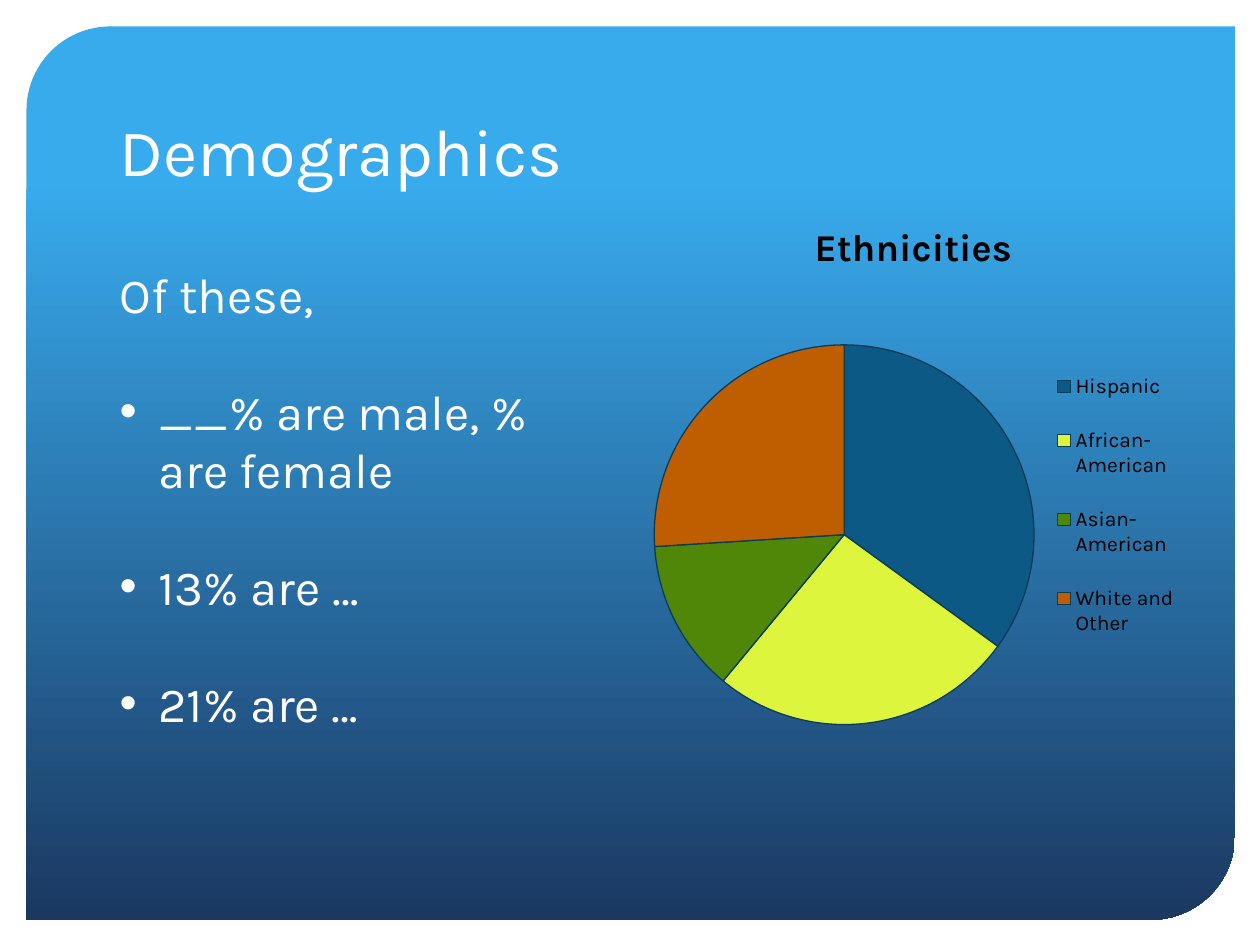
from lxml import etree
from pptx import Presentation
from pptx.chart.data import CategoryChartData as Data
from pptx.dml.color import RGBColor
from pptx.enum.chart import XL_CHART_TYPE as Kind, XL_LEGEND_POSITION as Side
from pptx.enum.shapes import MSO_SHAPE as Shape
from pptx.enum.text import MSO_ANCHOR as Anchor, PP_ALIGN as Align
from pptx.oxml import parse_xml
from pptx.oxml.ns import nsdecls, qn
from pptx.util import Inches, Pt

FONT = "Karla"
WHITE, BLACK = "FFFFFF", "000000"
SLICES = [
    ("Hispanic", 35, "0C5986"),
    ("African-American", 26, "DDF53D"),
    ("Asian-American", 13, "508709"),
    ("White and Other", 26, "BF5E00"),
]
LINES = [
    ("Of these,", False),
    ("__% are male, % are female", True),
    ("13% are …", True),
    ("21% are …", True),
]


def paint(color, code):
    color.rgb = RGBColor.from_string(code)


def style(font, size, code, bold=False):
    font.name, font.size, font.bold = FONT, Pt(size), bold
    paint(font.color, code)


def write(para, text, size, code):
    run = para.add_run()
    run.text = text
    style(run.font, size, code)


def add_panel(slide, box):
    panel = slide.shapes.add_shape(Shape.ROUND_2_DIAG_RECTANGLE, *map(Inches, box))
    panel.adjustments[0], panel.adjustments[1] = 0.094, 0
    panel.shadow.inherit = False
    panel.line.fill.background()
    panel.fill.gradient()
    panel.fill.gradient_angle = 270
    stops = [(0.17, "38ABED"), (1, "1B3861")]
    for stop, (place, code) in zip(panel.fill.gradient_stops, stops):
        stop.position = place
        paint(stop.color, code)
    slide.shapes.title.element.addprevious(panel.element)


def add_title(slide, box):
    title = slide.shapes.title
    title.left, title.top, title.width, title.height = map(Inches, box)
    frame = title.text_frame
    frame.vertical_anchor = Anchor.BOTTOM
    para = frame.paragraphs[0]
    para.alignment = Align.LEFT
    write(para, "Demographics", 38, WHITE)


def add_list(slide, box):
    frame = slide.shapes.add_textbox(*map(Inches, box)).text_frame
    frame.word_wrap = True
    for i, (text, dot) in enumerate(LINES):
        para = frame.add_paragraph() if i else frame.paragraphs[0]
        if i:
            para.space_before = Pt(33)
        if dot:
            props = para._p.get_or_add_pPr()
            props.set("marL", str(Inches(0.31)))
            props.set("indent", str(-Inches(0.31)))
            etree.SubElement(props, qn("a:buFont")).set("typeface", "Arial")
            etree.SubElement(props, qn("a:buChar")).set("char", "•")
        write(para, text, 28, WHITE)


def place(part, index, inner, box):
    for old in part.findall(qn("c:layout")):
        part.remove(old)
    target = '<c:layoutTarget val="inner"/>' if inner else ""
    modes = '<c:xMode val="edge"/><c:yMode val="edge"/>'
    sizes = "".join(f'<c:{key} val="{val}"/>' for key, val in zip("xywh", box))
    part.insert(index, parse_xml(
        f'<c:layout {nsdecls("c")}><c:manualLayout>{target}{modes}{sizes}'
        "</c:manualLayout></c:layout>"))


def add_pie(slide, box):
    data = Data()
    names, values, codes = zip(*SLICES)
    data.categories = names
    data.add_series("Series 1", values)
    chart = slide.shapes.add_chart(Kind.PIE, *map(Inches, box), data).chart
    style(chart.font, 18, BLACK)

    chart.has_title = True
    run = chart.chart_title.text_frame.paragraphs[0].add_run()
    run.text = "Ethnicities"
    style(run.font, 21.6, BLACK, True)

    chart.has_legend = True
    key = chart.legend
    key.position, key.include_in_layout = Side.RIGHT, False
    style(key.font, 12, BLACK)
    place(key._element, 1, False, (0.75, 0.25, 0.23, 0.54))

    plot = chart.plots[0]
    plot.vary_by_categories = True
    place(plot._element.getparent(), 0, True, (0.03, 0.25, 0.69, 0.64))
    for i, code in enumerate(codes):
        form = plot.series[0].points[i].format
        form.fill.solid()
        paint(form.fill.fore_color, code)
        form.line.width = Pt(0.75)
        paint(form.line.color, "083C59")


def main():
    deck = Presentation()
    deck.slide_width, deck.slide_height = Inches(10), Inches(7.5)
    slide = deck.slides.add_slide(deck.slide_layouts[5])
    add_panel(slide, (0.21, 0.21, 9.59, 7.09))
    add_title(slide, (0.85, 0.42, 8.29, 1.14))
    add_pie(slide, (5.05, 1.56, 4.4, 4.71))
    add_list(slide, (0.85, 2.05, 3.81, 3.87))
    deck.save("out.pptx")


if __name__ == "__main__":
    main()
